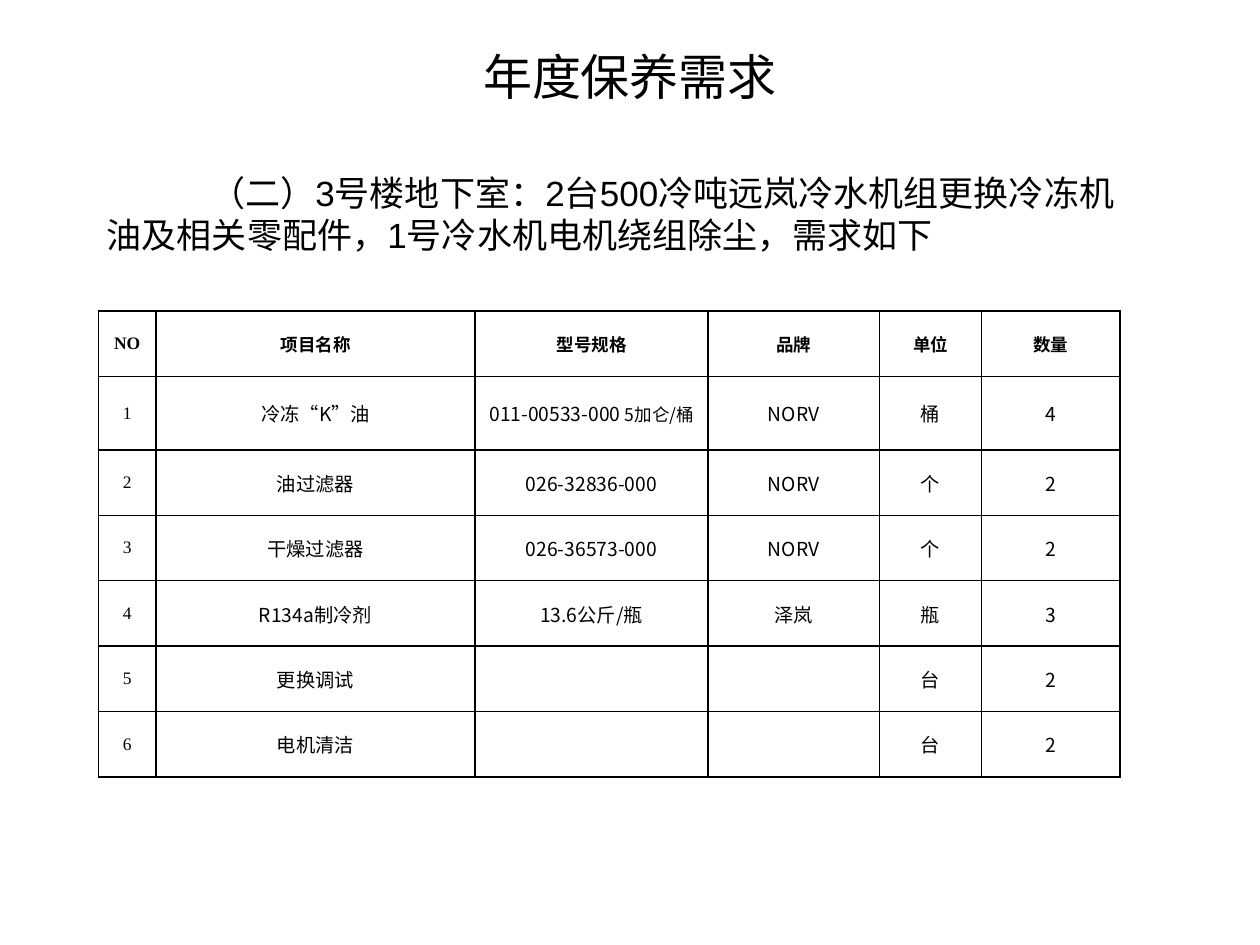
from dataclasses import dataclass

from lxml.etree import SubElement
from pptx import Presentation
from pptx.dml.color import RGBColor as Color
from pptx.enum.text import MSO_ANCHOR as Anchor, PP_ALIGN as Align
from pptx.oxml.ns import qn
from pptx.util import Inches, Pt


@dataclass(frozen=True)
class Theme:
    ink: str = "000000"
    body_font: str = "Arial"
    table_font: str = "Noto Sans CJK SC"
    number_font: str = "Times New Roman"
    title_size: int = 28
    body_size: int = 20
    cell_size: int = 11
    small_size: int = 10
    border: int = 1


HEADER = ["NO", "项目名称", "型号规格", "品牌", "单位", "数量"]
PARTS = [
    ["冷冻“K”油", "011-00533-000 |5加仑/桶", "NORV", "桶", "4"],
    ["油过滤器", "026-32836-000", "NORV", "个", "2"],
    ["干燥过滤器", "026-36573-000", "NORV", "个", "2"],
    ["R134a制冷剂", "13.6公斤/瓶", "泽岚", "瓶", "3"],
    ["更换调试", "", "", "台", "2"],
    ["电机清洁", "", "", "台", "2"],
]
COLUMN_WIDTHS = [4.6, 25.3, 18.5, 13.6, 8.1, 11]
ROW_HEIGHTS = [5.2, 5.8] + [5.2] * 5


class SlideBuilder:
    """Draws text and tables on one slide, measured in a grid of 100 by 75 units."""

    def __init__(self, deck, theme):
        self.theme = theme
        self.page = deck.slides.add_slide(deck.slide_layouts[6])
        self.unit = deck.slide_width / 100

    def grid(self, *lengths):
        return [round(length * self.unit) for length in lengths]

    def span(self, para, text, size, font, bold=False, asian=None):
        span = para.add_run()
        span.text = text
        for name, value in {"size": Pt(size), "bold": bold, "name": font}.items():
            setattr(span.font, name, value)
        span.font.color.rgb = Color.from_string(self.theme.ink)
        if asian:
            SubElement(span.font._element, qn("a:ea"), typeface=asian)

    def text(self, place, text, size, indent=0, **formats):
        frame = self.page.shapes.add_textbox(*self.grid(*place)).text_frame
        frame.word_wrap = True
        frame.vertical_anchor = formats.pop("anchor", Anchor.TOP)
        para = frame.paragraphs[0]
        for name, value in formats.items():
            setattr(para, name, value)
        if indent:
            para._p.get_or_add_pPr().set("indent", str(self.grid(indent)[0]))
        self.span(para, text, size, self.theme.body_font)

    def borders(self, cell):
        properties = cell._tc.get_or_add_tcPr()
        for position, side in enumerate(("lnL", "lnR", "lnT", "lnB")):
            line = SubElement(properties, qn(f"a:{side}"), w=str(Pt(self.theme.border)))
            fill = SubElement(line, qn("a:solidFill"))
            SubElement(fill, qn("a:srgbClr"), val=self.theme.ink)
            properties.insert(position, line)

    def cell(self, cell, text, row, column):
        theme = self.theme
        formats = {
            "vertical_anchor": Anchor.MIDDLE,
            "margin_left": Inches(0.07),
            "margin_right": Inches(0.07),
            "margin_top": 0,
            "margin_bottom": 0,
        }
        for name, value in formats.items():
            setattr(cell, name, value)
        cell.fill.background()
        self.borders(cell)
        para = cell.text_frame.paragraphs[0]
        para.alignment = Align.CENTER
        font = theme.table_font if column else theme.number_font
        for index, part in enumerate(text.split("|") if text else []):
            small = row == 0 or column == 0 or index > 0
            size = theme.small_size if small else theme.cell_size
            self.span(para, part, size, font, row == 0, theme.table_font)

    def table(self, left, top, widths, heights, rows):
        place = self.grid(left, top, sum(widths), sum(heights))
        table = self.page.shapes.add_table(len(rows), len(widths), *place).table
        table.first_row = table.horz_banding = False
        for column, width in zip(table.columns, self.grid(*widths)):
            column.width = width
        for row, height in zip(table.rows, self.grid(*heights)):
            row.height = height
        for row, values in enumerate(rows):
            for column, value in enumerate(values):
                self.cell(table.cell(row, column), value, row, column)


def main():
    deck = Presentation()
    deck.slide_width, deck.slide_height = Inches(10), Inches(7.5)
    theme = Theme()
    slide = SlideBuilder(deck, theme)
    slide.text((5, 3, 90, 6.1), "年度保养需求", theme.title_size,
               anchor=Anchor.MIDDLE, alignment=Align.CENTER)
    slide.text((7.5, 13.1, 83, 7.7),
               "（二）3号楼地下室：2台500冷吨远岚冷水机组更换冷冻机油及相关零配件，"
               "1号冷水机电机绕组除尘，需求如下",
               theme.body_size, indent=8.2)
    rows = [HEADER] + [[str(number), *part] for number, part in enumerate(PARTS, 1)]
    slide.table(7.8, 24.7, COLUMN_WIDTHS, ROW_HEIGHTS, rows)
    deck.save("out.pptx")


if __name__ == "__main__":
    main()
